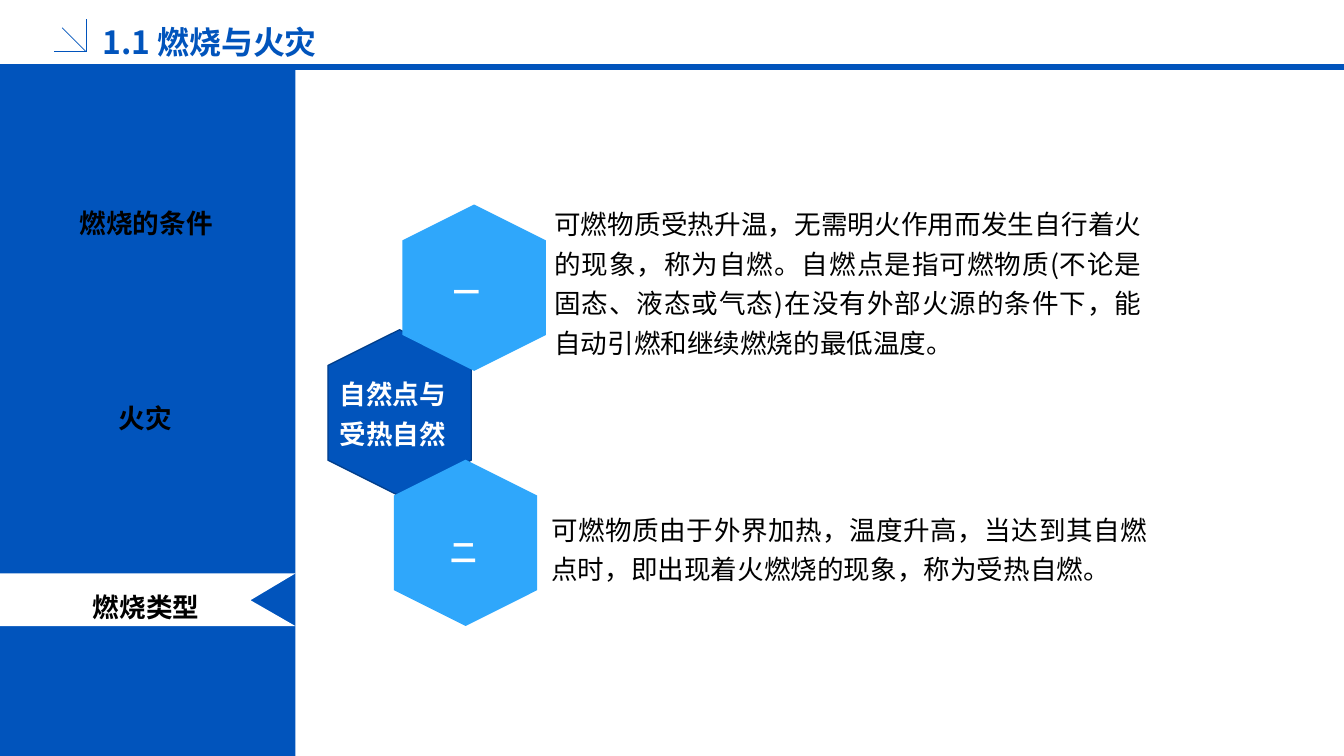
from lxml.etree import SubElement
from pptx import Presentation
from pptx.dml.color import RGBColor
from pptx.enum.shapes import MSO_CONNECTOR, MSO_SHAPE
from pptx.enum.text import MSO_ANCHOR, MSO_AUTO_SIZE, PP_ALIGN
from pptx.oxml.ns import qn
from pptx.util import Inches, Pt

BLUE, SKY, EDGE = "0154BC", "2FA7FB", "013E8B"
WHITE, BLACK = "FFFFFF", "000000"
NOTO, ARIAL = "Noto Sans CJK SC", "Arial"


def paint(item, fill, edge=None):
    item.shadow.inherit = False
    item.fill.solid()
    item.fill.fore_color.rgb = RGBColor.from_string(fill)
    if edge:
        item.line.color.rgb = RGBColor.from_string(edge)
        item.line.width = Pt(1)
    else:
        item.line.fill.background()


def write(box, runs, color, size, bold, align, gap, anchor):
    frame = box.text_frame
    look = {"word_wrap": True, "auto_size": MSO_AUTO_SIZE.NONE,
            "vertical_anchor": anchor}
    for key, val in look.items():
        setattr(frame, key, val)
    para = frame.paragraphs[0]
    for key, val in {"alignment": align, "line_spacing": gap}.items():
        setattr(para, key, val)
    for text, face in runs:
        run = para.add_run()
        run.text = text
        for key, val in {"size": Pt(size), "bold": bold, "name": face}.items():
            setattr(run.font, key, val)
        run.font.color.rgb = RGBColor.from_string(color)
        SubElement(run.font._element, qn("a:ea")).set("typeface", NOTO)


deck = Presentation()
deck.slide_width, deck.slide_height = Inches(14.06), Inches(7.91)
slide = deck.slides.add_slide(deck.slide_layouts[5])
shapes = slide.shapes

title = shapes.title
place = {"left": 0.97, "top": 0.17, "width": 3.15, "height": 0.45}
for key, val in place.items():
    setattr(title, key, Inches(val))
write(title, [("1.1 ", NOTO), ("燃烧与火灾", ARIAL)], BLUE, 24, True,
      PP_ALIGN.LEFT, 1.2, MSO_ANCHOR.MIDDLE)

rules = [
    (0, 0.7, 14.06, 0.7, 4.5),
    (0.57, 0.54, 0.9, 0.54, 0.5),
    (0.9, 0.54, 0.9, 0.2, 0.5),
    (0.9, 0.54, 0.65, 0.29, 0.5),
]
for *ends, width in rules:
    rule = shapes.add_connector(MSO_CONNECTOR.STRAIGHT, *map(Inches, ends))
    rule.line.color.rgb = RGBColor.from_string(BLUE)
    rule.line.width = Pt(width)
    SubElement(rule._element.spPr, qn("a:effectLst"))

side = shapes.add_shape(MSO_SHAPE.RECTANGLE, 0, Inches(0.73),
                        Inches(3.09), Inches(7.18))
paint(side, BLUE)

notch = [(3.09, 6), (2.62, 6.28), (3.09, 6.55), (0, 6.55)]
pen = shapes.build_freeform(0, Inches(6))
pen.add_line_segments([(Inches(x), Inches(y)) for x, y in notch])
paint(pen.convert_to_shape(), WHITE)

tabs = [("燃烧的条件", 0.35, 2.06), ("火灾", 0.34, 4.1), ("燃烧类型", 0.35, 6.08)]
for text, left, top in tabs:
    tab = shapes.add_textbox(Inches(left), Inches(top), Inches(2.36), Inches(0.47))
    write(tab, [(text, ARIAL)], BLACK, 20, True,
          PP_ALIGN.CENTER, 1.2, MSO_ANCHOR.MIDDLE)

cells = [(3.31, 3.57, BLUE, EDGE), (4.09, 2.26, SKY, None), (4, 4.93, SKY, None)]
for left, top, fill, edge in cells:
    cell = shapes.add_shape(MSO_SHAPE.HEXAGON, Inches(left), Inches(top),
                            Inches(1.74), Inches(1.5))
    cell.rotation = 90
    paint(cell, fill, edge)

marks = [
    ("自然点与受热自然", 3.41, 3.82, 0.94),
    ("一", 4.18, 2.75, 0.48),
    ("二", 4.15, 5.47, 0.48),
]
for text, left, top, height in marks:
    mark = shapes.add_textbox(Inches(left), Inches(top), Inches(1.4), Inches(height))
    write(mark, [(text, NOTO)], WHITE, 20, True,
          PP_ALIGN.CENTER, 1.25, MSO_ANCHOR.TOP)

notes = [
    ("可燃物质受热升温，无需明火作用而发生自行着火的现象，称为自燃。"
     "自燃点是指可燃物质(不论是固态、液态或气态)在没有外部火源的条件下，"
     "能自动引燃和继续燃烧的最低温度。", 5.7, 2.04, 6.34, 1.78),
    ("可燃物质由于外界加热，温度升高，当达到其自燃点时，"
     "即出现着火燃烧的现象，称为受热自燃。", 5.67, 5.24, 6.43, 0.94),
]
for text, *area in notes:
    note = shapes.add_textbox(*map(Inches, area))
    write(note, [(text, NOTO)], BLACK, 20, False,
          PP_ALIGN.JUSTIFY, 1.25, MSO_ANCHOR.TOP)

deck.save("out.pptx")
